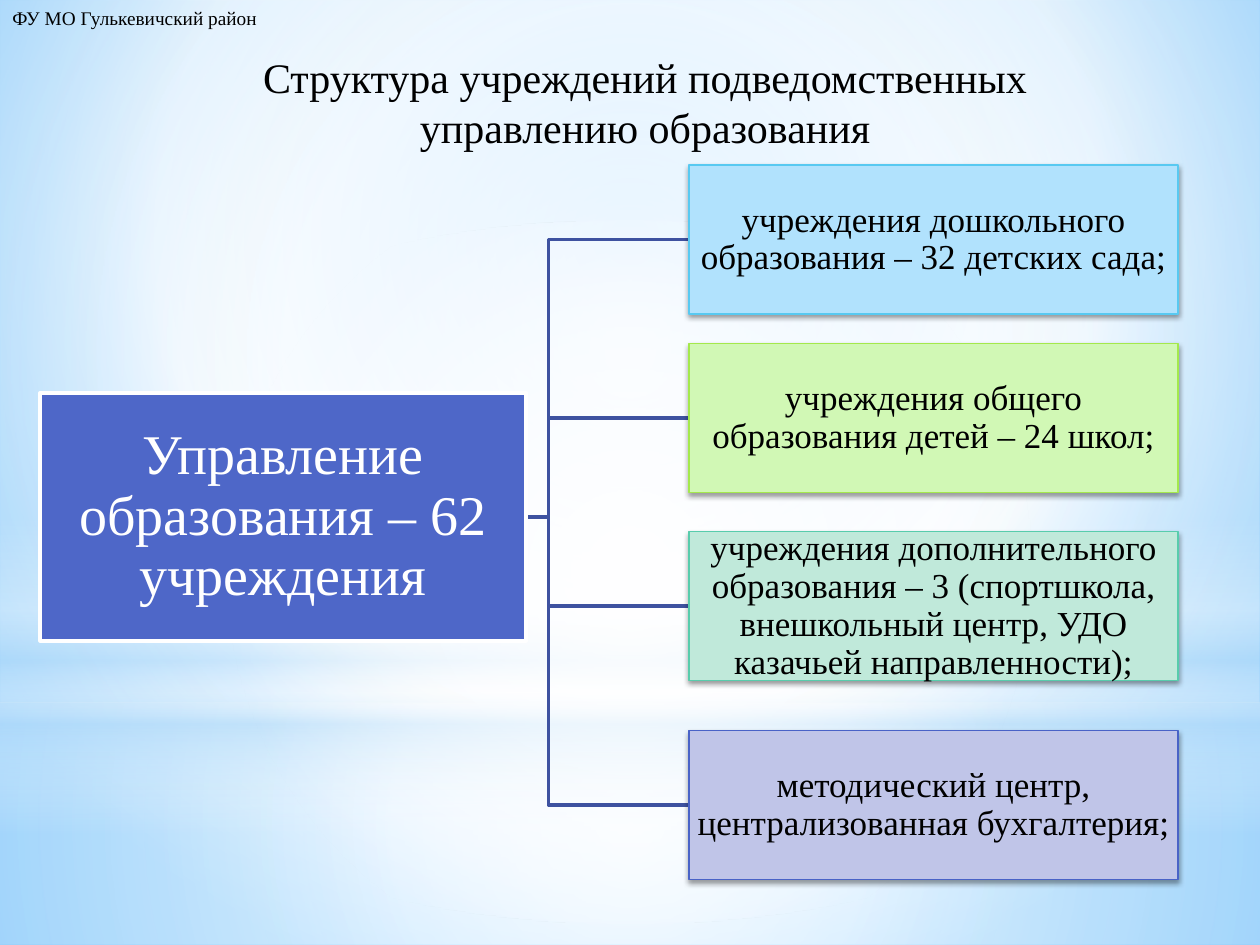
from lxml.etree import SubElement
from pptx import Presentation
from pptx.dml.color import RGBColor
from pptx.enum.shapes import MSO_SHAPE
from pptx.enum.text import MSO_ANCHOR, PP_ALIGN
from pptx.oxml.ns import qn
from pptx.util import Cm, Pt

FONT = "Times New Roman"
COLORS = {
    "black": "000000", "white": "FFFFFF", "pale": "B4DCFA",
    "sky": "9ED5FF", "deep": "5BB9FF", "root": "4E67C8", "link": "3E52A0",
}
HEAD = "ФУ МО Гулькевичский район"
TITLE = "Структура учреждений подведомственных управлению образования"
ROOT = "Управление образования – 62 учреждения"

# Text, top, fill, line
UNITS = [
    ("учреждения дошкольного образования – 32 детских сада;",
     3.33, "B1E2FD", "58C9F1"),
    ("учреждения общего образования детей – 24 школ;",
     6.93, "D1F8B5", "A4E94C"),
    ("учреждения дополнительного образования – 3 (спортшкола, "
     "внешкольный центр, УДО казачьей направленности);",
     10.72, "C0E9DA", "58CCAC"),
    ("методический центр, централизованная бухгалтерия;",
     14.73, "C0C5E8", "4963C7"),
]

# Gradient stops: position, colour, opacity (percent)
BACK = [(0, "sky", 100), (60, "white", 100), (100, "deep", 100)]
MID = (50, 50, 50, 50)
# Shape, box, stops, focus (None makes it linear, downwards)
GLOWS = [
    (MSO_SHAPE.RECTANGLE, (0, 14.17, 25.4, 4.88),
     [(0, "white", 91), (37, "white", 76), (100, "pale", 79)], MID),
    (MSO_SHAPE.RECTANGLE, (0, 0, 25.4, 14.17),
     [(0, "white", 89), (48, "white", 62), (100, "pale", 79)], MID),
    (MSO_SHAPE.RECTANGLE, (0, 10.46, 25.4, 6.35),
     [(0, "white", 0), (29, "white", 30), (45, "pale", 40),
      (55, "white", 26), (65, "pale", 60), (100, "white", 0)], None),
    (MSO_SHAPE.OVAL, (0, 4.45, 25.4, 14.17),
     [(0, "white", 100), (56, "white", 0)], MID),
]

ROOT_BOX = (0.81, 7.92, 9.8, 5.0)
UNIT_X, UNIT_W, UNIT_H = 13.89, 9.86, 3.0
LINK_X = 8.23


def rgb(name):
    return RGBColor.from_string(COLORS.get(name, name))


def blend(props, stops, focus):
    """Swap the solid fill in props for a gradient."""
    solid = props.find(qn("a:solidFill"))
    grad = SubElement(props, qn("a:gradFill"), rotWithShape="1")
    props.replace(solid, grad)
    steps = SubElement(grad, qn("a:gsLst"))
    for pos, name, alpha in stops:
        stop = SubElement(steps, qn("a:gs"), pos=str(pos * 1000))
        color = SubElement(stop, qn("a:srgbClr"), val=COLORS[name])
        if alpha < 100:
            SubElement(color, qn("a:alpha"), val=str(alpha * 1000))
    if focus:
        way = SubElement(grad, qn("a:path"), path="circle")
        sides = {k: str(v * 1000) for k, v in zip("ltrb", focus)}
        SubElement(way, qn("a:fillToRect"), **sides)
    else:
        SubElement(grad, qn("a:lin"), ang="5400000", scaled="0")


def write(shape, text, size, color="black", align=PP_ALIGN.CENTER):
    para = shape.text_frame.paragraphs[0]
    para.text = text
    para.alignment = align
    para.font.size = Pt(size)
    para.font.name = FONT
    para.font.color.rgb = rgb(color)
    return para


def add_box(shapes, box, text, size, ink, fill, line, width, inset):
    shape = shapes.add_shape(MSO_SHAPE.RECTANGLE, *map(Cm, box))
    shape.shadow.inherit = False
    shape.fill.solid()
    shape.fill.fore_color.rgb = rgb(fill)
    shape.line.color.rgb = rgb(line)
    shape.line.width = Pt(width)
    frame = shape.text_frame
    frame.word_wrap = True
    frame.vertical_anchor = MSO_ANCHOR.MIDDLE
    frame.margin_left = frame.margin_right = Cm(inset)
    frame.margin_top = frame.margin_bottom = Cm(inset)
    write(shape, text, size, ink).line_spacing = 0.9
    return shape


def drop_shade(shape):
    effects = shape.element.spPr.find(qn("a:effectLst"))
    shade = SubElement(effects, qn("a:outerShdw"), blurRad=str(Pt(3.1)),
                       dist=str(Pt(1.6)), dir="5400000", rotWithShape="0")
    color = SubElement(shade, qn("a:srgbClr"), val=COLORS["black"])
    SubElement(color, qn("a:alpha"), val="38000")


def add_link(shapes, start, end):
    (x1, y1), (x2, y2) = start, end
    turn = (x1 + x2) / 2
    path = shapes.build_freeform(Cm(x1), Cm(y1))
    points = [(turn, y1), (turn, y2), (x2, y2)]
    path.add_line_segments([(Cm(x), Cm(y)) for x, y in points], close=False)
    link = path.convert_to_shape()
    link.shadow.inherit = False
    link.fill.background()
    link.line.color.rgb = rgb("link")
    link.line.width = Pt(2)


def main():
    deck = Presentation()
    deck.slide_width, deck.slide_height = Cm(25.4), Cm(19.05)
    slide = deck.slides.add_slide(deck.slide_layouts[6])
    shapes = slide.shapes

    # Background and soft glows
    slide.background.fill.solid()
    blend(next(slide.element.iter(qn("p:bgPr"))), BACK, (20, 10, 20, 60))
    for kind, box, stops, focus in GLOWS:
        glow = shapes.add_shape(kind, *map(Cm, box))
        glow.shadow.inherit = False
        glow.line.fill.background()
        glow.fill.solid()
        blend(glow.element.spPr, stops, focus)

    # Title
    title = shapes.add_textbox(Cm(3.1), Cm(0.91), Cm(19.81), Cm(2.13))
    title.text_frame.word_wrap = True
    write(title, TITLE, 24)

    # Links, lowest first, behind the boxes
    hub = (LINK_X, ROOT_BOX[1] + ROOT_BOX[3] / 2)
    for _, top, _, _ in reversed(UNITS):
        add_link(shapes, hub, (UNIT_X, top + UNIT_H / 2))

    # Root and its units
    add_box(shapes, ROOT_BOX, ROOT, 32, "white", "root", "white", 2, 0.05)
    for text, top, fill, line in UNITS:
        box = (UNIT_X, top, UNIT_W, UNIT_H)
        drop_shade(add_box(shapes, box, text, 20, "black",
                           fill, line, 0.75, 0.03))

    # Header
    head = shapes.add_textbox(Cm(0), Cm(0), Cm(5.72), Cm(0.74))
    head.text_frame.word_wrap = False
    write(head, HEAD, 11, align=PP_ALIGN.LEFT)

    deck.save("out.pptx")


if __name__ == "__main__":
    main()
